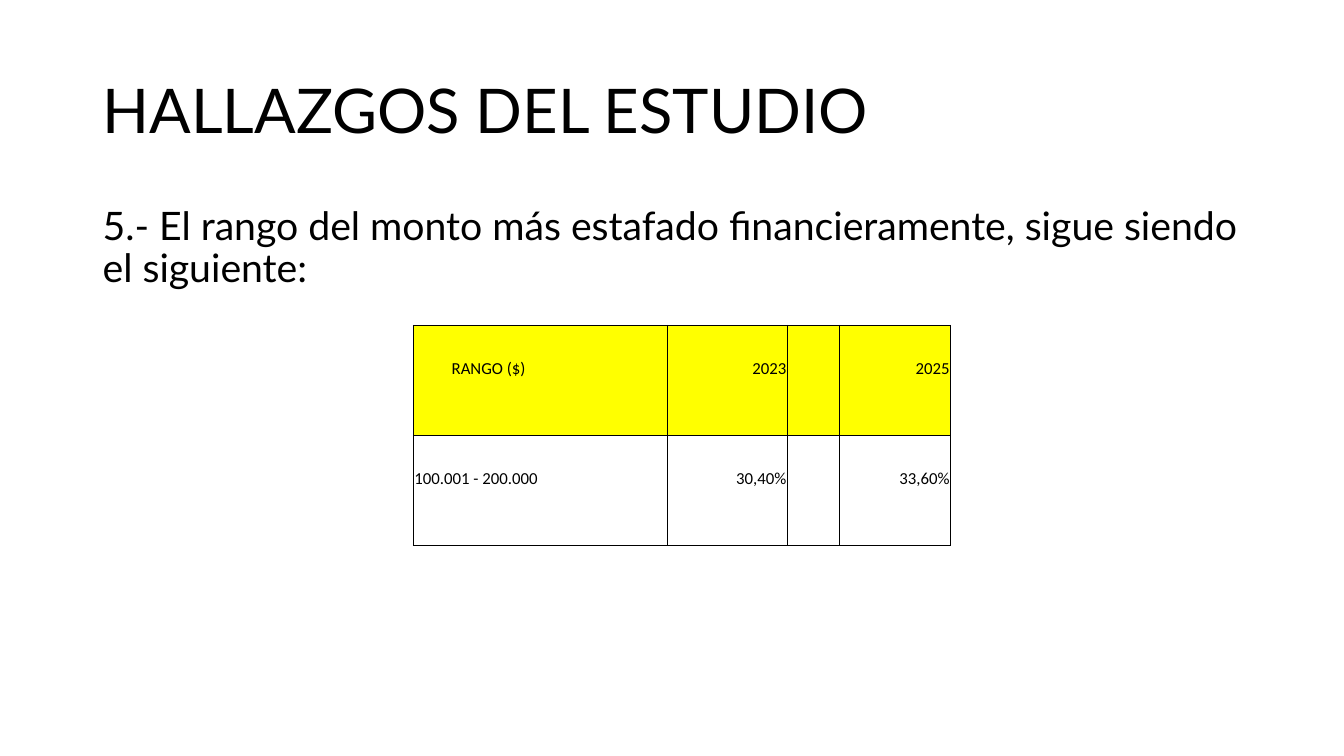
from lxml.etree import SubElement
from pptx import Presentation
from pptx.dml.color import RGBColor
from pptx.enum.text import MSO_ANCHOR as Anchor, PP_ALIGN as Align
from pptx.oxml.ns import qn
from pptx.util import Inches, Pt

BLACK = RGBColor(0, 0, 0)
YELLOW = RGBColor(255, 255, 0)
COLUMN_WIDTHS = [1.12, 0.43, 0.97, 1.19, 0.52, 1.1]
ROW_HEIGHTS = [0.53, 0.56, 0.53, 0.56]
RANGE_SPAN = 3
RANGE_ROWS = [
    ("RANGO ($)", "2023", "2025"),
    ("100.001 - 200.000", "30,40%", "33,60%"),
]


def add_span(para, text, size, font):
    span = para.add_run()
    span.text = text
    span.font.size = Pt(size)
    span.font.name = font
    span.font.color.rgb = BLACK


def add_text(page, text, left, top, width, height, size, anchor):
    box = page.shapes.add_textbox(Inches(left), Inches(top), Inches(width), Inches(height))
    frame = box.text_frame
    frame.word_wrap = True
    frame.vertical_anchor = anchor
    para = frame.paragraphs[0]
    para.line_spacing = 0.9
    add_span(para, text, size, "Lato")
    return para


def set_borders(cell, visible_sides):
    properties = cell._tc.get_or_add_tcPr()
    for side in "LRTB":
        line = SubElement(properties, qn(f"a:ln{side}"), w=str(Pt(1)))
        if side in visible_sides:
            fill = SubElement(line, qn("a:solidFill"))
            SubElement(fill, qn("a:srgbClr"), val=str(BLACK))
        else:
            SubElement(line, qn("a:noFill"))


def visible_sides(row, column):
    merged = row % 2 == 0 and column == 0
    sides = "T" if row % 2 == 0 else "B"
    if column == 0 or column >= RANGE_SPAN:
        sides += "L"
    if merged or column >= RANGE_SPAN - 1:
        sides += "R"
    return sides


def fill_cell(cell, text, align, indent=0):
    cell.vertical_anchor = Anchor.BOTTOM
    cell.margin_left = cell.margin_top = cell.margin_right = Inches(0.01)
    cell.margin_bottom = 0
    if indent:
        cell.margin_left = Inches(indent)
    para = cell.text_frame.paragraphs[0]
    para.alignment = align
    add_span(para, text, 12, "Calibri")


def add_range_table(page, left, top):
    frame = page.shapes.add_table(
        len(ROW_HEIGHTS), len(COLUMN_WIDTHS), Inches(left), Inches(top),
        Inches(sum(COLUMN_WIDTHS)), Inches(sum(ROW_HEIGHTS)))
    table = frame.table
    table.first_row = table.horz_banding = False
    for column, width in zip(table.columns, COLUMN_WIDTHS):
        column.width = Inches(width)
    for row, height in enumerate(ROW_HEIGHTS):
        table.rows[row].height = Inches(height)
        for column in range(len(COLUMN_WIDTHS)):
            cell = table.cell(row, column)
            set_borders(cell, visible_sides(row, column))
            if row < 2:
                cell.fill.solid()
                cell.fill.fore_color.rgb = YELLOW
            else:
                cell.fill.background()
    for index, (label, before, after) in enumerate(RANGE_ROWS):
        row = 2 * index
        table.cell(row, 0).merge(table.cell(row, RANGE_SPAN - 1))
        fill_cell(table.cell(row, 0), label, Align.LEFT, 0.38 if index == 0 else 0)
        fill_cell(table.cell(row, 3), before, Align.RIGHT)
        fill_cell(table.cell(row, 5), after, Align.RIGHT)


def main():
    deck = Presentation()
    deck.slide_width = Inches(13.33)
    deck.slide_height = Inches(7.5)
    page = deck.slides.add_slide(deck.slide_layouts[6])
    add_text(page, "HALLAZGOS DEL ESTUDIO", 0.92, 0.4, 11.5, 1.45, 44, Anchor.MIDDLE)
    finding = add_text(
        page,
        "5.- El rango del monto más estafado financieramente, sigue siendo el siguiente:",
        0.92, 2, 11.5, 4.76, 28, Anchor.TOP)
    finding.space_before = Pt(10)
    add_range_table(page, 4.1, 3.23)
    deck.save("out.pptx")


if __name__ == "__main__":
    main()
